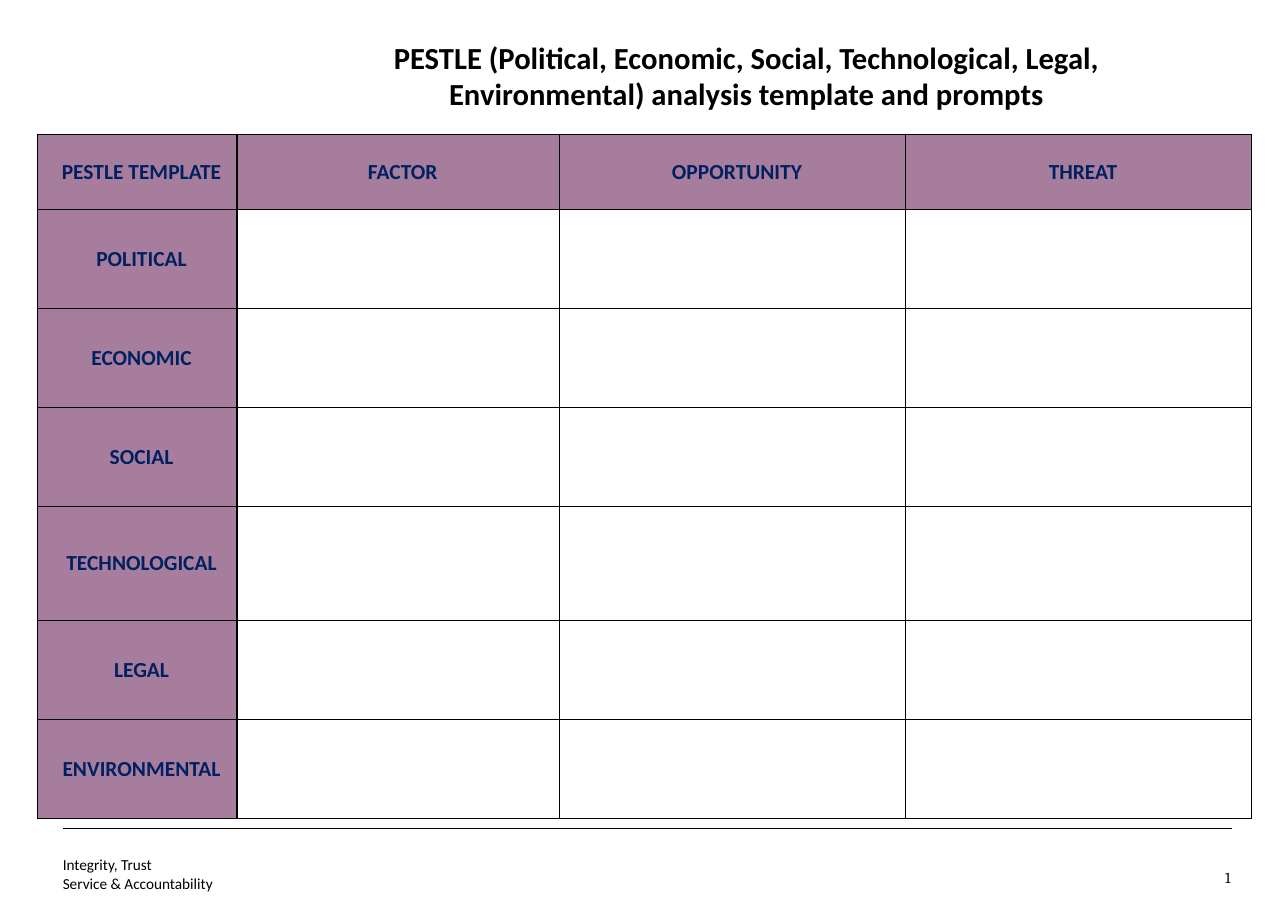
from dataclasses import dataclass

from lxml import etree
from pptx import Presentation
from pptx import util as u
from pptx.dml.color import RGBColor
from pptx.enum import shapes, text
from pptx.oxml import ns


@dataclass
class Theme:
    ink: RGBColor = RGBColor.from_string("000000")
    label: RGBColor = RGBColor.from_string("002060")
    mauve: RGBColor = RGBColor.from_string("A77D9E")
    body_font: str = "Calibri"
    number_font: str = "Cambria"
    title_size: int = 20
    label_size: int = 14
    footer_size: int = 10


theme = Theme()
deck = Presentation()
deck.slide_width, deck.slide_height = u.Inches(11.69), u.Inches(8.27)
page = deck.slides.add_slide(deck.slide_layouts[6])


def add_span(para, words, size, color, font=theme.body_font, bold=False):
    span = para.add_run()
    span.text = words
    span.font.name, span.font.size, span.font.bold = font, u.Pt(size), bold
    span.font.color.rgb = color


def add_box(left, top, width, height, margin_x=0, margin_y=0, wrap=True):
    box = page.shapes.add_textbox(*map(u.Inches, (left, top, width, height)))
    frame = box.text_frame
    frame.word_wrap = wrap
    frame.margin_left = frame.margin_right = u.Inches(margin_x)
    frame.margin_top = frame.margin_bottom = u.Inches(margin_y)
    return frame


# Footer rule
rule = page.shapes.add_connector(
    shapes.MSO_CONNECTOR.STRAIGHT,
    u.Inches(0.57), u.Inches(7.52), u.Inches(11.18), u.Inches(7.52))
rule.line.color.rgb = theme.ink
rule.line.width = u.Pt(0.5)
etree.SubElement(rule.element.spPr, ns.qn("a:effectLst"))

# Page number
para = add_box(10.96, 7.88, 0.21, 0.17, wrap=False).paragraphs[0]
para.alignment = text.PP_ALIGN.RIGHT
add_span(para, "1", theme.footer_size, theme.ink, theme.number_font)

# PESTLE table: labels in the first row and column, the rest left to fill in
headings = ["PESTLE TEMPLATE", "FACTOR", "OPPORTUNITY", "THREAT"]
factors = ["POLITICAL", "ECONOMIC", "SOCIAL", "TECHNOLOGICAL", "LEGAL", "ENVIRONMENTAL"]
widths = [1.81, 2.93, 3.14, 3.14]
heights = [0.68, 0.9, 0.9, 0.9, 1.03, 0.9, 0.9]

table = page.shapes.add_table(
    len(heights), len(widths), u.Inches(0.34), u.Inches(1.22),
    u.Inches(sum(widths)), u.Inches(sum(heights))).table
table.first_row = table.horz_banding = False
for column, width in zip(table.columns, widths):
    column.width = u.Inches(width)
for row, height in zip(table.rows, heights):
    row.height = u.Inches(height)

for r in range(len(heights)):
    for c in range(len(widths)):
        cell = table.cell(r, c)

        # Borders go before the fill in the cell properties
        properties = cell._tc.get_or_add_tcPr()
        for side in ("lnL", "lnR", "lnT", "lnB"):
            border = etree.SubElement(properties, ns.qn(f"a:{side}"), w=str(u.Pt(1)))
            solid = etree.SubElement(border, ns.qn("a:solidFill"))
            etree.SubElement(solid, ns.qn("a:srgbClr"), val=str(theme.ink))

        if r and c:
            cell.fill.background()
            continue
        cell.fill.solid()
        cell.fill.fore_color.rgb = theme.mauve
        cell.vertical_anchor = text.MSO_ANCHOR.MIDDLE
        cell.margin_left, cell.margin_right = u.Inches(0.15), u.Inches(0.07)
        cell.margin_top = cell.margin_bottom = u.Inches(0.08)
        para = cell.text_frame.paragraphs[0]
        para.alignment = text.PP_ALIGN.CENTER
        label = headings[c] if r == 0 else factors[r - 1]
        add_span(para, label, theme.label_size, theme.label, bold=True)

# Title
para = add_box(2.7, 0.29, 8.15, 0.73, 0.11, 0.06).paragraphs[0]
para.alignment = text.PP_ALIGN.CENTER
add_span(para, "PESTLE (Political, Economic, Social, Technological, Legal, "
         "Environmental) analysis template and prompts",
         theme.title_size, theme.ink, bold=True)

# Footer motto
frame = add_box(0.57, 7.66, 3.7, 0.44)
frame.vertical_anchor = text.MSO_ANCHOR.BOTTOM
para = frame.paragraphs[0]
add_span(para, "Integrity, Trust", theme.footer_size, theme.ink)
para.add_line_break()
add_span(para, "Service & Accountability", theme.footer_size, theme.ink)

deck.save("out.pptx")
